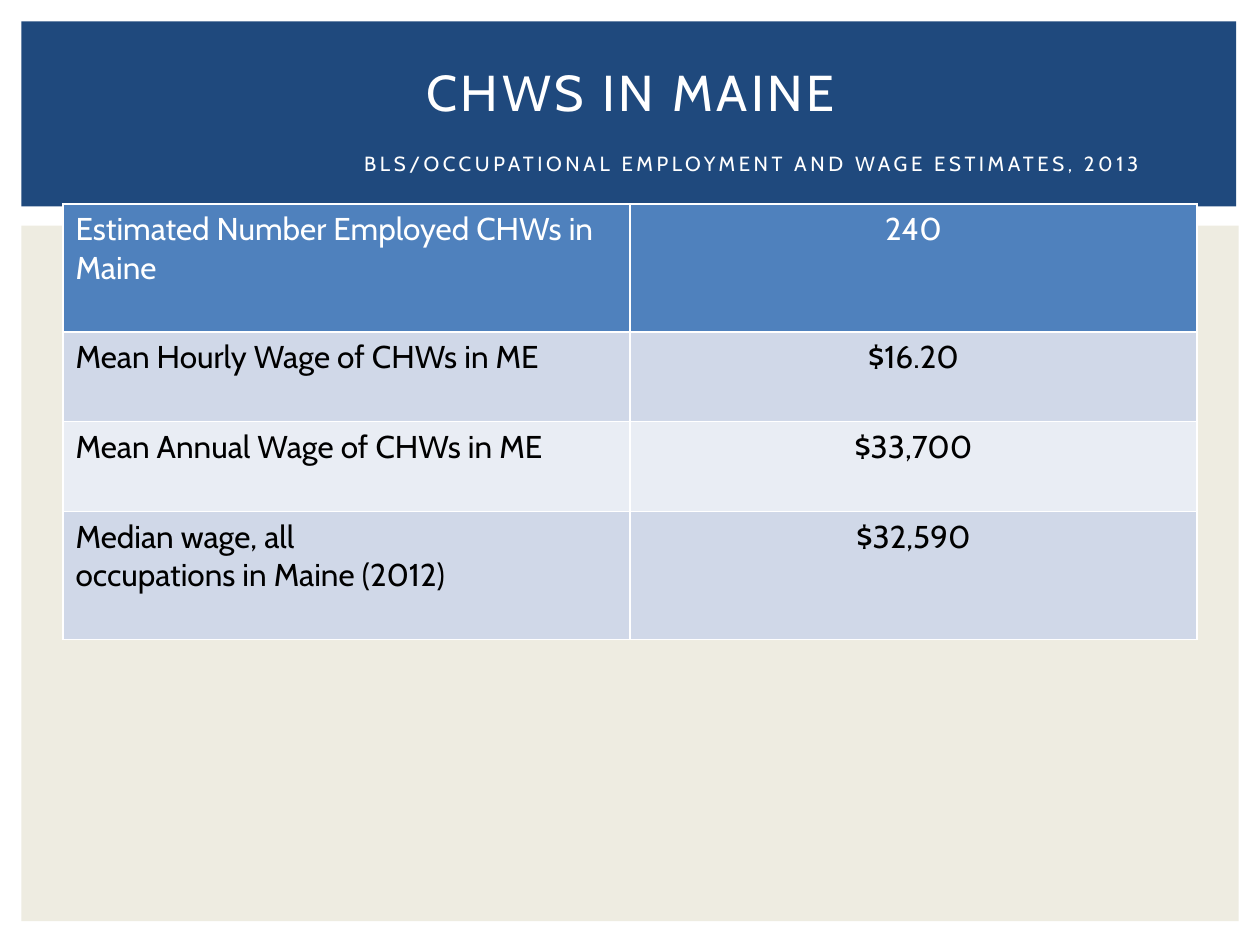
"""Build the slide on CHW employment and wages in Maine."""
from lxml import etree
from pptx import Presentation
from pptx.dml.color import RGBColor
from pptx.enum.shapes import MSO_SHAPE
from pptx.enum.text import MSO_ANCHOR, PP_ALIGN
from pptx.oxml import parse_xml
from pptx.util import Cm, Pt

RECT = MSO_SHAPE.RECTANGLE
MIDDLE = MSO_ANCHOR.MIDDLE
LEFT, CENTER = PP_ALIGN.LEFT, PP_ALIGN.CENTER

WHITE = RGBColor(0xFF, 0xFF, 0xFF)
BLACK = RGBColor(0x00, 0x00, 0x00)
CREAM = RGBColor(0xEE, 0xEC, 0xE1)
NAVY = RGBColor(0x1F, 0x49, 0x7D)
BLUE = RGBColor(0x4F, 0x81, 0xBD)
BAND = RGBColor(0xD0, 0xD8, 0xE8)
PALE = RGBColor(0xE9, 0xED, 0xF4)
FONT = "Cabin"
NS = "http://schemas.openxmlformats.org/drawingml/2006/main"


def style(p, size, color, align):
    p.alignment = align
    for r in p.runs:
        r.font.name = FONT
        r.font.size = Pt(size)
        r.font.color.rgb = color


def add_borders(cell, color, width):
    tcPr = cell._tc.get_or_add_tcPr()
    for i, side in enumerate(("lnL", "lnR", "lnT", "lnB")):
        tcPr.insert(i, parse_xml(
            f'<a:{side} xmlns:a="{NS}" w="{Pt(width)}"><a:solidFill>'
            f'<a:srgbClr val="{color}"/></a:solidFill></a:{side}>'))


prs = Presentation()
prs.slide_width, prs.slide_height = Cm(25.4), Cm(19.05)
s = prs.slides.add_slide(prs.slide_layouts[6])

for top, width, height, color in ((4.55, 24.54, 14.02, CREAM), (0.43, 24.49, 3.73, NAVY)):
    sp = s.shapes.add_shape(RECT, Cm(0.43), Cm(top), Cm(width), Cm(height))
    sp.shadow.inherit = False
    sp.fill.solid()
    sp.fill.fore_color.rgb = color
    sp.line.fill.background()

rows = [
    ("Estimated Number Employed CHWs in Maine", "240", 2.58, BLUE, WHITE),
    ("Mean Hourly Wage of CHWs in ME", "$16.20", 1.81, BAND, BLACK),
    ("Mean Annual Wage of CHWs in ME", "$33,700", 1.81, PALE, BLACK),
    ("Median wage, all\noccupations in Maine (2012)", "$32,590", 2.58, BAND, BLACK),
]
table = s.shapes.add_table(len(rows), 2, Cm(1.27), Cm(4.11), Cm(22.86), Cm(8.78)).table
for i, (label, value, height, fill, color) in enumerate(rows):
    table.rows[i].height = Cm(height)
    for j, (text, align) in enumerate(((label, LEFT), (value, CENTER))):
        cell = table.cell(i, j)
        cell.fill.solid()
        cell.fill.fore_color.rgb = fill
        add_borders(cell, WHITE, 1)
        cell.text_frame.text = text
        for p in cell.text_frame.paragraphs:
            style(p, 18, color, align)

tf = s.shapes.add_textbox(Cm(1.07), Cm(0.99), Cm(23.29), Cm(2.92)).text_frame
tf.word_wrap = True
tf.vertical_anchor = MIDDLE
tf.margin_top, tf.margin_bottom = Cm(0.13), Cm(0.27)
tf.text = "CHWS IN MAINE\nBLS/OCCUPATIONAL EMPLOYMENT AND WAGE ESTIMATES, 2013"
for p, size in zip(tf.paragraphs, (28.8, 11.7)):
    style(p, size, WHITE, CENTER)
    for rPr in etree.ElementBase.iter(p._p, f"{{{NS}}}rPr"):
        rPr.set("spc", "200")
p.space_before = Pt(17)
p._p.get_or_add_pPr().set("marL", str(Cm(4.88)))

prs.save("out.pptx")
